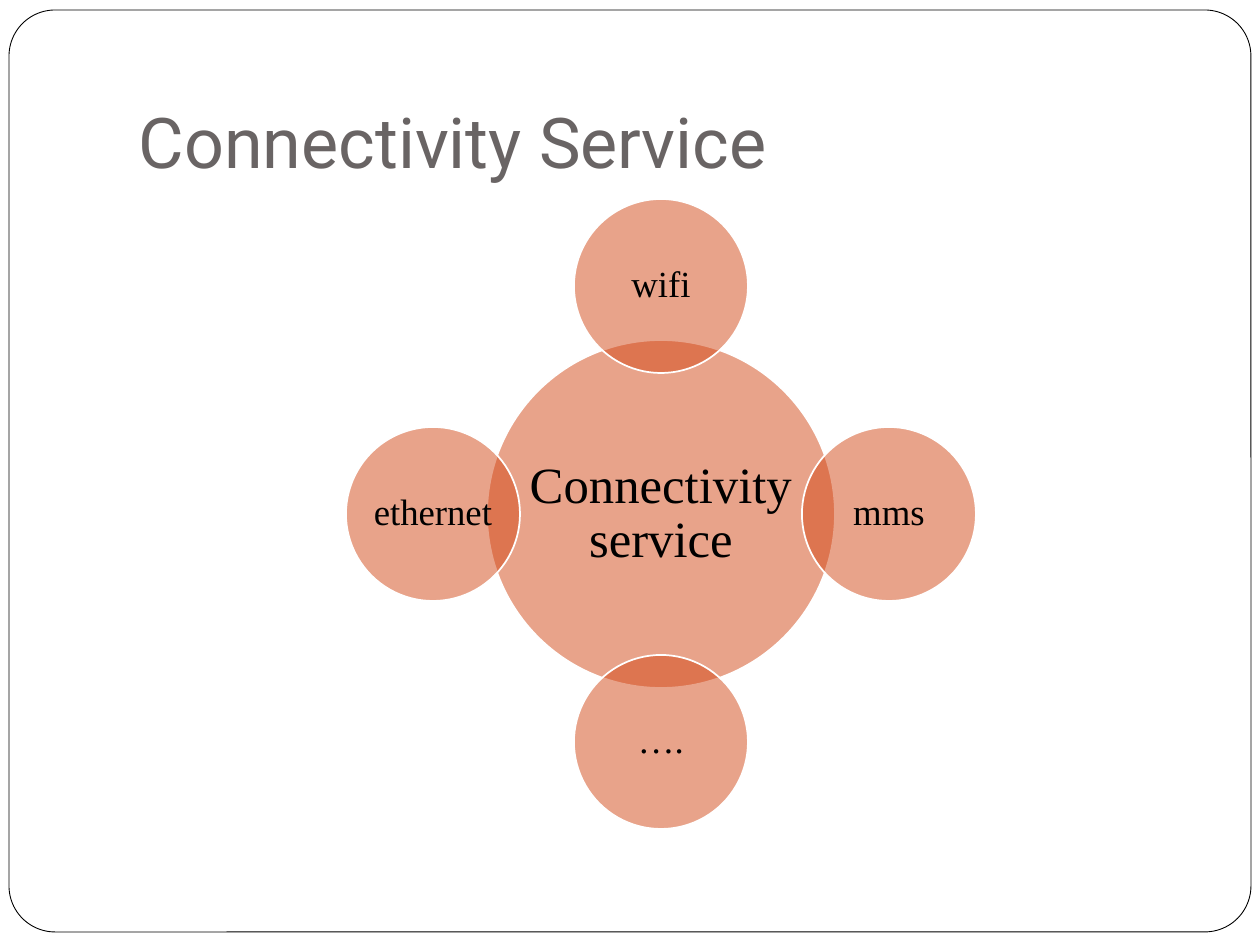
from lxml import etree
from pptx import Presentation
from pptx.dml.color import RGBColor
from pptx.enum.shapes import MSO_SHAPE
from pptx.enum.text import MSO_ANCHOR, PP_ALIGN
from pptx.oxml.ns import qn
from pptx.util import Pt

PX = 914400 / 126  # EMU per px
OVAL, ROUNDED = MSO_SHAPE.OVAL, MSO_SHAPE.ROUNDED_RECTANGLE
MIDDLE, BOTTOM = MSO_ANCHOR.MIDDLE, MSO_ANCHOR.BOTTOM
LEFT, CENTER = PP_ALIGN.LEFT, PP_ALIGN.CENTER

THEME = {
    "white": RGBColor.from_string("FFFFFF"),
    "black": RGBColor.from_string("000000"),
    "title": RGBColor.from_string("696464"),
    "circle": RGBColor.from_string("D34817"),
    "title_font": "Roboto",
    "body_font": "Times New Roman",
    "title_size": 40,
    "hub_size": 29,
    "node_size": 21,
}


def add_panel(kind, bounds, fill, line, line_width):
    panel = slide.shapes.add_shape(kind, *[round(v * PX) for v in bounds])
    panel.shadow.inherit = False
    panel.fill.solid()
    panel.fill.fore_color.rgb = fill
    panel.line.color.rgb = line
    panel.line.width = Pt(line_width)
    return panel


def add_label(text, bounds, margins, font, size, color, align, anchor):
    box = slide.shapes.add_textbox(*[round(v * PX) for v in bounds])
    frame = box.text_frame
    frame.word_wrap = True
    frame.vertical_anchor = anchor
    (frame.margin_left, frame.margin_top,
     frame.margin_right, frame.margin_bottom) = [round(m * PX) for m in margins]
    para = frame.paragraphs[0]
    para.alignment = align
    span = para.add_run()
    span.text = text
    span.font.name = font
    span.font.size = Pt(size)
    span.font.color.rgb = color
    return para


deck = Presentation()
deck.slide_width, deck.slide_height = round(1260 * PX), round(945 * PX)
slide = deck.slides.add_slide(deck.slide_layouts[6])

# Rounded border around the slide
border = add_panel(ROUNDED, (9, 10, 1242, 922), THEME["white"], THEME["black"], 0.5)
border.adjustments[0] = 0.05

# Title
add_label("Connectivity Service", (126, 38, 1071, 157), (13, 6, 13, 13),
          THEME["title_font"], THEME["title_size"], THEME["title"], LEFT, BOTTOM)

# Hub with four satellites: text, column step, row step, diameter, type size, margin
CENTER_X, CENTER_Y, ORBIT = 661, 514, 228
circles = [
    ("Connectivity service", 0, 0, 348, THEME["hub_size"], 5),
    ("wifi", 0, -1, 174, THEME["node_size"], 4),
    ("mms", 1, 0, 174, THEME["node_size"], 4),
    ("….", 0, 1, 174, THEME["node_size"], 4),
    ("ethernet", -1, 0, 174, THEME["node_size"], 4),
]
for text, column, row, diameter, size, margin in circles:
    bounds = (CENTER_X + column * ORBIT - diameter // 2,
              CENTER_Y + row * ORBIT - diameter // 2, diameter, diameter)
    circle = add_panel(OVAL, bounds, THEME["circle"], THEME["white"], 1)
    color = circle.fill._xPr.find(qn("a:solidFill"))[0]
    etree.SubElement(color, qn("a:alpha"), val="50000")
    # The label spans the whole circle, wider than an oval's own text area
    para = add_label(text, bounds, [margin] * 4, THEME["body_font"], size,
                     THEME["black"], CENTER, MIDDLE)
    para.line_spacing = 0.9

deck.save("out.pptx")
